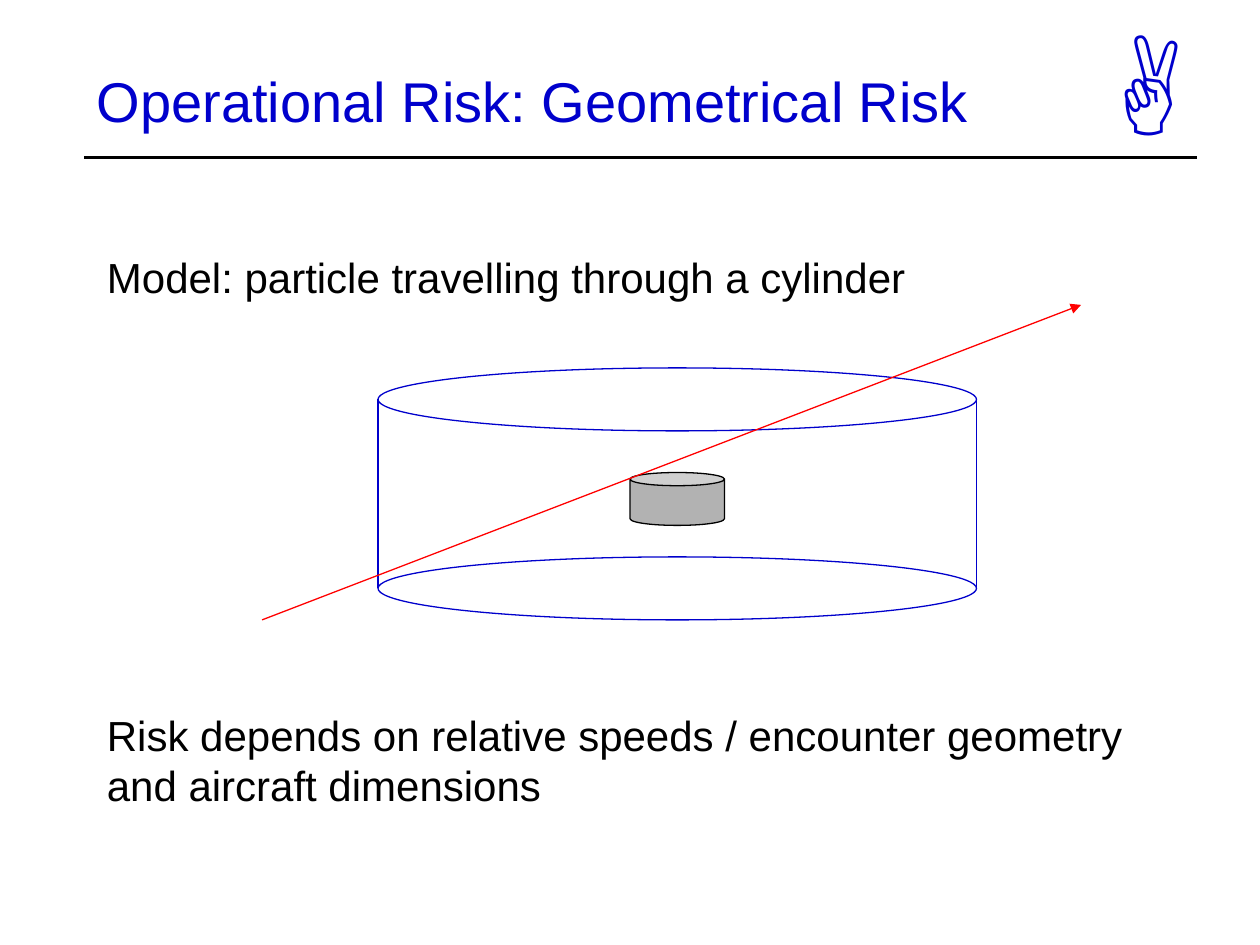
import pptx
import pptx.util
import pptx.dml.color
import pptx.enum.shapes
import pptx.enum.text
import pptx.oxml

Inches = pptx.util.Inches
KIND = pptx.enum.shapes.MSO_SHAPE
ANCHOR = pptx.enum.text.MSO_ANCHOR

BLUE, BLACK, RED, GREY = "0000CC", "000000", "FF0000", "B2B2B2"

# Content: lines, box, size, font, colour, anchor, wrap, spacing
TEXTS = [
    (["Operational Risk: Geometrical Risk"], (0.67, 0.17, 8.5, 1.25),
     32, "Arial", BLUE, ANCHOR.MIDDLE, True, None),
    (["✌"], (8.75, 0, 1.17, 1.3),
     72, "Times New Roman", BLUE, ANCHOR.TOP, True, None),
    (["Model: particle travelling through a cylinder"], (0.75, 1.75, 6.55, 0.7),
     24, "Arial", BLACK, ANCHOR.TOP, False, 1.5),
    (["Risk depends on relative speeds / encounter geometry",
      "and aircraft dimensions"], (0.75, 5.58, 8.36, 0.9),
     24, "Arial", BLACK, ANCHOR.TOP, False, None),
]
RULE = (0.67, 1.25, 9.5, 1.25)
CORE = (5, 3.75, 0.75, 0.42)
PATH = (2.08, 4.92, 8.58, 2.42)

# Outer cylinder: left, width, rim height, rim tops
LEFT, WIDE, RIM = 3, 4.75, 0.5
TOPS = (2.92, 4.42)

deck = pptx.Presentation()
deck.slide_width, deck.slide_height = Inches(10), Inches(7.5)
slide = deck.slides.add_slide(deck.slide_layouts[6])
shapes = slide.shapes


def color(code):
    return pptx.dml.color.RGBColor.from_string(code)


def add_text(lines, box, size, face, tint, anchor, wrap, gap):
    frame = shapes.add_textbox(*map(Inches, box)).text_frame
    frame.word_wrap = wrap
    frame.vertical_anchor = anchor
    frame.text = "\n".join(lines)
    for para in frame.paragraphs:
        para.font.size = pptx.util.Pt(size)
        para.font.name = face
        para.font.color.rgb = color(tint)
        para.line_spacing = gap


def add_solid(kind, box, edge, fill=None):
    shape = shapes.add_shape(kind, *map(Inches, box))
    shape.shadow.inherit = False
    if fill:
        shape.fill.solid()
        shape.fill.fore_color.rgb = color(fill)
    else:
        shape.fill.background()
    shape.line.color.rgb = color(edge)
    shape.line.width = pptx.util.Pt(0.75)
    return shape


def add_line(ends, tint, width=0.75, arrow=False):
    line = shapes.add_connector(
        pptx.enum.shapes.MSO_CONNECTOR.STRAIGHT, *map(Inches, ends))
    line.line.color.rgb = color(tint)
    line.line.width = pptx.util.Pt(width)
    if arrow:
        head = pptx.oxml.parse_xml(
            '<a:tailEnd xmlns:a="http://schemas.openxmlformats.org/'
            'drawingml/2006/main" type="triangle"/>')
        line.line._get_or_add_ln().append(head)
    props = line._element.spPr
    props.append(props.makeelement(pptx.oxml.ns.qn("a:effectLst"), {}))


# Heading rule
add_line(RULE, BLACK, 2)

# Aircraft as a small solid cylinder
core = add_solid(KIND.CAN, CORE, BLACK, GREY)
core.adjustments[0] = 0.25

# Outer cylinder: two rims and two sides
for top in TOPS:
    add_solid(KIND.OVAL, (LEFT, top, WIDE, RIM), BLUE)
high, low = (top + RIM / 2 for top in TOPS)
for side in (LEFT, LEFT + WIDE):
    add_line((side, high, side, low), BLUE)

# Particle track
add_line(PATH, RED, arrow=True)

# Wording
for item in TEXTS:
    add_text(*item)

deck.save("out.pptx")
